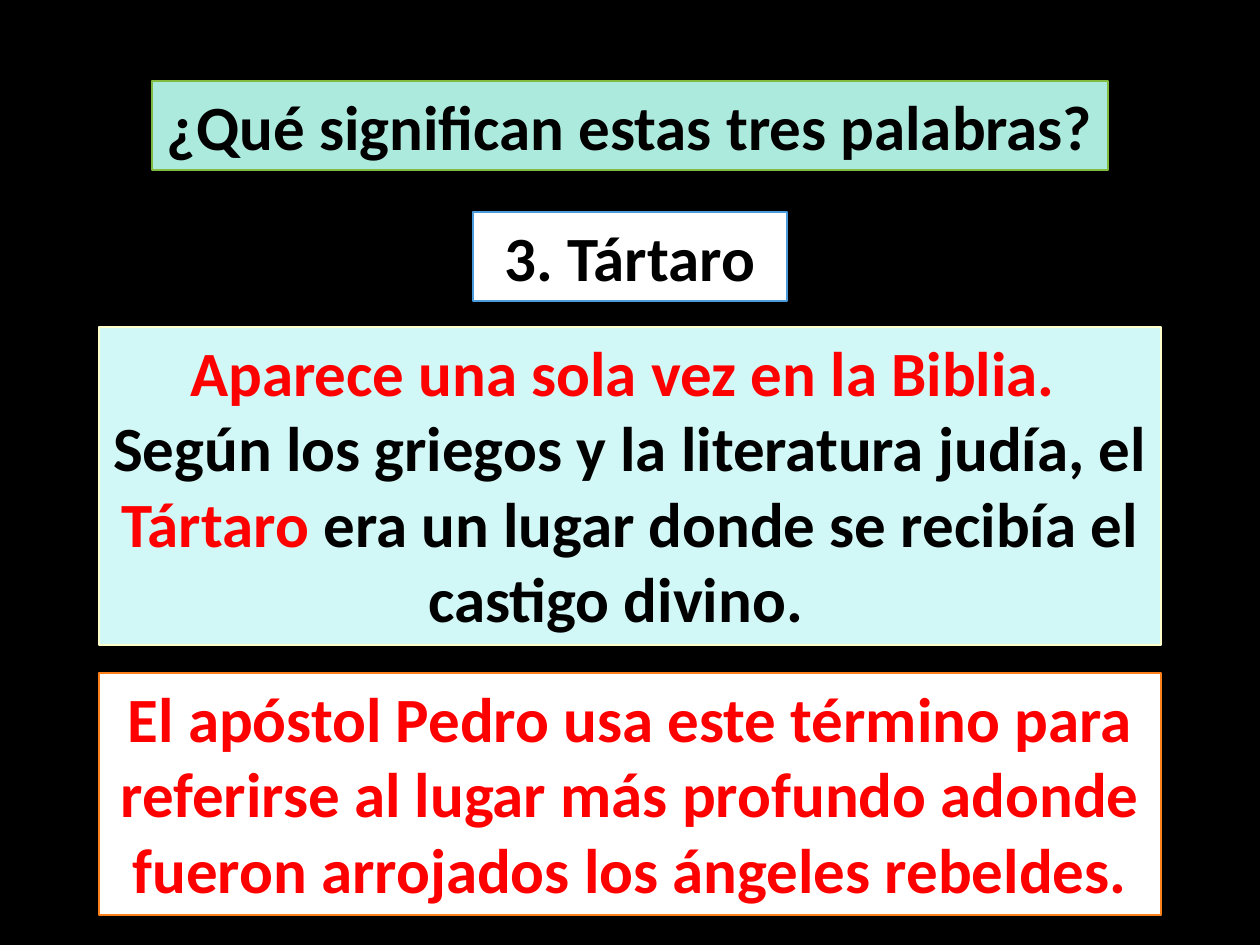
from dataclasses import dataclass

import pptx
import pptx.dml.color
import pptx.enum.shapes
import pptx.enum.text
import pptx.util
from lxml import etree

EMU_PER_PX = 914400 // 126
SLIDE_W, SLIDE_H = 1260, 945
DRAWING_NS = "http://schemas.openxmlformats.org/drawingml/2006/main"


@dataclass(frozen=True)
class Theme:
    font: str = "Calibri"
    text_pt: int = 36
    border_pt: int = 1
    outline_pt: float = 0.75
    background: str = "000000"
    text: str = "000000"
    accent: str = "FF0000"
    white: str = "FFFFFF"
    title_fill: str = "ACEADD"
    title_line: str = "81BB42"
    term_line: str = "4A9BDC"
    meaning_fill: str = "D1F7F6"
    meaning_line: str = "FFFFCC"
    usage_line: str = "FE801A"


THEME = Theme()


def px(n):
    return pptx.util.Emu(n * EMU_PER_PX)


def rgb(value):
    return pptx.dml.color.RGBColor.from_string(value)


def outline_text(r, color):
    """Draw the edges of the letters; the line must come first in the run properties."""
    ln = etree.Element(f"{{{DRAWING_NS}}}ln", w=str(pptx.util.Pt(THEME.outline_pt)))
    fill = etree.SubElement(ln, f"{{{DRAWING_NS}}}solidFill")
    etree.SubElement(fill, f"{{{DRAWING_NS}}}srgbClr", val=color)
    r.font._element.insert(0, ln)


def add_run(p, text, color):
    r = p.add_run()
    r.text = text
    r.font.name = THEME.font
    r.font.size = pptx.util.Pt(THEME.text_pt)
    r.font.bold = True
    r.font.color.rgb = rgb(color)
    outline_text(r, color)


def add_panel(s, top, width, height, fill, line, paragraphs):
    """Add a horizontally centred panel; each paragraph is a list of (text, colour)."""
    sp = s.shapes.add_shape(
        pptx.enum.shapes.MSO_SHAPE.RECTANGLE,
        px((SLIDE_W - width) // 2), px(top), px(width), px(height))
    sp.shadow.inherit = False
    sp.fill.solid()
    sp.fill.fore_color.rgb = rgb(fill)
    sp.line.color.rgb = rgb(line)
    sp.line.width = pptx.util.Pt(THEME.border_pt)
    tf = sp.text_frame
    tf.word_wrap = True
    tf.auto_size = pptx.enum.text.MSO_AUTO_SIZE.SHAPE_TO_FIT_TEXT
    tf.vertical_anchor = pptx.enum.text.MSO_ANCHOR.TOP
    for i, runs in enumerate(paragraphs):
        p = tf.add_paragraph() if i else tf.paragraphs[0]
        p.alignment = pptx.enum.text.PP_ALIGN.CENTER
        for text, color in runs:
            add_run(p, text, color)


def build_term_slide(prs):
    t = THEME
    s = prs.slides.add_slide(prs.slide_layouts[6])
    s.background.fill.solid()
    s.background.fill.fore_color.rgb = rgb(t.background)

    add_panel(s, 212, 314, 89, t.white, t.term_line, [[("3. Tártaro", t.text)]])
    add_panel(s, 81, 956, 89, t.title_fill, t.title_line,
              [[("¿Qué significan estas tres palabras?", t.text)]])
    add_panel(s, 327, 1062, 318, t.meaning_fill, t.meaning_line, [
        [("Aparece una sola vez en la Biblia. ", t.accent)],
        [("Según los griegos y la literatura judía, el ", t.text),
         ("Tártaro ", t.accent),
         ("era un lugar donde se recibía el castigo divino.  ", t.text)],
    ])
    add_panel(s, 673, 1062, 242, t.white, t.usage_line, [
        [("El apóstol Pedro usa este término para referirse al lugar más "
          "profundo adonde fueron arrojados los ángeles rebeldes.", t.accent)],
    ])


def main():
    prs = pptx.Presentation()
    prs.slide_width, prs.slide_height = px(SLIDE_W), px(SLIDE_H)
    build_term_slide(prs)
    prs.save("out.pptx")


if __name__ == "__main__":
    main()
